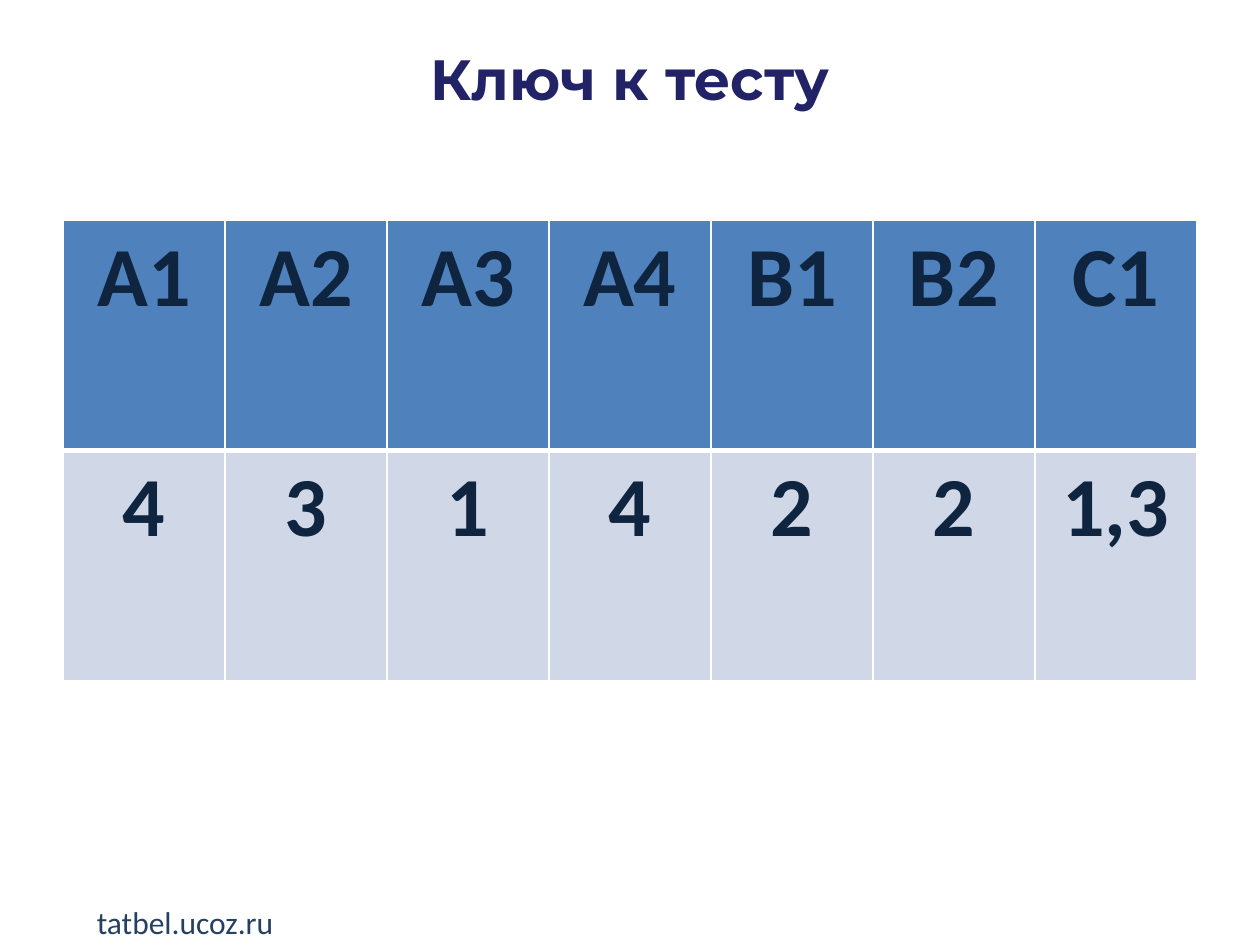
import pptx
import pptx.util
import pptx.dml.color
import pptx.enum.text
import pptx.oxml
import pptx.oxml.ns

Inches = pptx.util.Inches
RGBColor = pptx.dml.color.RGBColor
PP_ALIGN = pptx.enum.text.PP_ALIGN

WHITE = RGBColor(0xFF, 0xFF, 0xFF)
TITLE_BLUE = RGBColor(0x22, 0x22, 0x67)
SITE_BLUE = RGBColor(0x25, 0x40, 0x61)
KEY_TEXT = RGBColor(0x0F, 0x24, 0x3E)
HEADER_FILL = RGBColor(0x4F, 0x81, 0xBD)
ANSWER_FILL = RGBColor(0xD0, 0xD8, 0xE8)


def style(paragraph, font_name, size, color, bold=False, align=PP_ALIGN.CENTER):
    paragraph.alignment = align
    paragraph.font.name = font_name
    paragraph.font.size = pptx.util.Pt(size)
    paragraph.font.color.rgb = color
    paragraph.font.bold = bold


def set_border(cell, side, width):
    line = pptx.oxml.parse_xml(
        f'<a:{side} {pptx.oxml.ns.nsdecls("a")} w="{pptx.util.Pt(width)}">'
        f'<a:solidFill><a:srgbClr val="{WHITE}"/></a:solidFill></a:{side}>'
    )
    cell._tc.get_or_add_tcPr().append(line)


deck = pptx.Presentation()
deck.slide_width = Inches(10)
deck.slide_height = Inches(7.5)
slide = deck.slides.add_slide(deck.slide_layouts[6])

site = slide.shapes.add_textbox(Inches(0.67), Inches(7.12), Inches(2.33), Inches(0.4)).text_frame
site.word_wrap = True
site.text = "tatbel.ucoz.ru"
style(site.paragraphs[0], "Calibri", 18, SITE_BLUE, align=PP_ALIGN.LEFT)

title = slide.shapes.add_textbox(Inches(0.5), Inches(0.3), Inches(9), Inches(1.25)).text_frame
title.word_wrap = True
title.text = "Ключ к тесту"
style(title.paragraphs[0], "Montserrat", 32.4, TITLE_BLUE, bold=True)

answers = {"А1": "4", "А2": "3", "А3": "1", "А4": "4", "В1": "2", "В2": "2", "С1": "1,3"}
key = slide.shapes.add_table(
    2, len(answers), Inches(0.5), Inches(1.75), Inches(9), Inches(3.65)
).table
for column, pair in enumerate(answers.items()):
    for row, (text, fill) in enumerate(zip(pair, (HEADER_FILL, ANSWER_FILL))):
        cell = key.cell(row, column)
        cell.text = text
        style(cell.text_frame.paragraphs[0], "Calibri", 48, KEY_TEXT, bold=True)
        top, bottom = ((1, 3), (3, 1))[row]
        for side, width in (("lnL", 1), ("lnR", 1), ("lnT", top), ("lnB", bottom)):
            set_border(cell, side, width)
        cell.fill.solid()
        cell.fill.fore_color.rgb = fill

deck.save("out.pptx")
